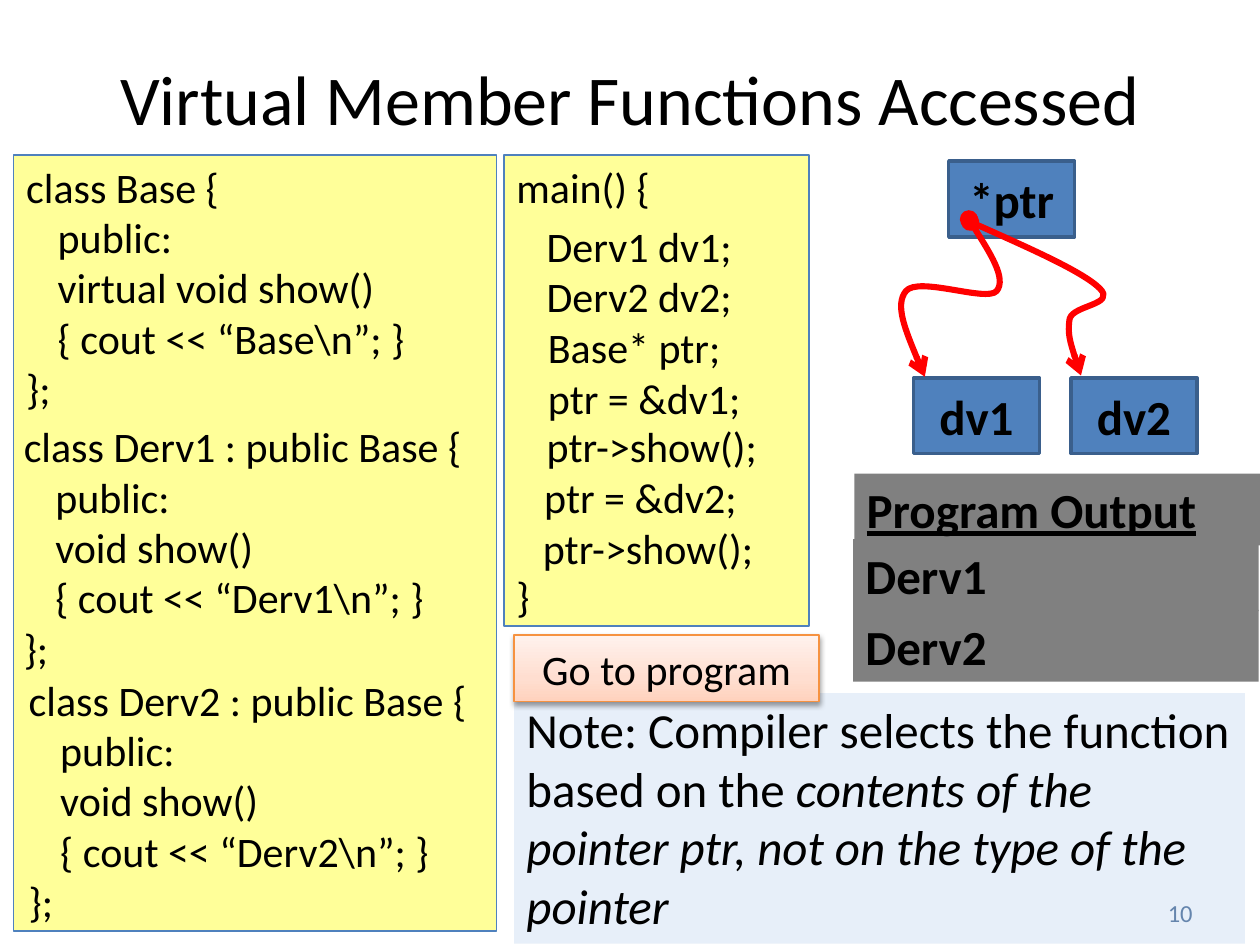
from dataclasses import dataclass
from typing import Optional

import pptx
import pptx.dml.color
import pptx.enum.shapes
import pptx.enum.text
import pptx.oxml
import pptx.oxml.ns
import pptx.util
from pptx.util import Inches

RGBColor = pptx.dml.color.RGBColor
Align = pptx.enum.text.PP_ALIGN
Anchor = pptx.enum.text.MSO_ANCHOR
qn = pptx.oxml.ns.qn

BLACK = RGBColor(0x00, 0x00, 0x00)
YELLOW = RGBColor(0xFF, 0xFF, 0x00)
BLUE = RGBColor(0x4F, 0x81, 0xBD)
DARK_BLUE = RGBColor(0x3A, 0x5F, 0x8C)
NAVY = RGBColor(0x1F, 0x49, 0x7D)
PALE_BLUE = RGBColor(0xC6, 0xD9, 0xF1)
GRAY = RGBColor(0x80, 0x80, 0x80)
RED = RGBColor(0xFF, 0x00, 0x00)
ORANGE = RGBColor(0xF6, 0x92, 0x40)
PEACH = RGBColor(0xFF, 0xDE, 0xD0)
BUTTON_STOPS = ((0, "FFD2BD"), (35, "FFDED0"), (100, "FFF2ED"))
CODE_INDENT = Inches(0.25)


@dataclass
class Box:
    left: float
    top: float
    width: float
    height: float
    lines: tuple[str, ...]
    indented: tuple[int, ...] = ()
    fill: Optional[RGBColor] = None
    opacity: int = 100
    line: Optional[RGBColor] = None
    line_width: float = 0.75
    size: int = 24
    color: RGBColor = BLACK
    bold: bool = False
    underline: bool = False
    centered: bool = False
    middle: bool = False


def draw_box(slide, box: Box):
    """Draw a filled rectangle, or a plain text box when there is no fill."""
    place = [Inches(v) for v in (box.left, box.top, box.width, box.height)]
    if box.fill is None:
        shape = slide.shapes.add_textbox(*place)
    else:
        shape = slide.shapes.add_shape(
            pptx.enum.shapes.MSO_SHAPE.RECTANGLE, *place)
        shape.shadow.inherit = False
        shape.fill.solid()
        shape.fill.fore_color.rgb = box.fill
        if box.opacity < 100:
            color = next(shape.fill._xPr.iter(qn("a:srgbClr")))
            color.append(pptx.oxml.parse_xml(
                f'<a:alpha {pptx.oxml.ns.nsdecls("a")} val="{box.opacity * 1000}"/>'))
        if box.line is None:
            shape.line.fill.background()
        else:
            shape.line.color.rgb = box.line
            shape.line.width = pptx.util.Pt(box.line_width)
    frame = shape.text_frame
    frame.word_wrap = True
    frame.vertical_anchor = Anchor.MIDDLE if box.middle else Anchor.TOP
    frame.text = "\n".join(box.lines)
    for index, paragraph in enumerate(frame.paragraphs):
        paragraph.alignment = Align.CENTER if box.centered else Align.LEFT
        if index in box.indented:
            properties = paragraph._p.get_or_add_pPr()
            properties.set("marL", str(CODE_INDENT))
            properties.set("indent", "0")
        for run in paragraph.runs:
            format_run(run, box)
    return shape


def format_run(run, box: Box) -> None:
    run.font.name = "Calibri"
    run.font.size = pptx.util.Pt(box.size)
    run.font.color.rgb = box.color
    run.font.bold = box.bold
    run.font.underline = box.underline


def draw_curved_arrow(slide, points: list[tuple[float, float]]) -> None:
    """Draw Bezier curves: a start point, then three points per curve."""
    start, *rest = [(Inches(x), Inches(y)) for x, y in points]
    builder = slide.shapes.build_freeform(*start)
    builder.add_line_segments(rest, close=False)
    shape = builder.convert_to_shape()
    shape.shadow.inherit = False
    shape.fill.background()
    shape.line.color.rgb = RED
    shape.line.width = pptx.util.Pt(3.5)

    # Join every three line segments into one cubic curve
    namespace = pptx.oxml.ns.nsdecls("a")
    segments = list(shape._element.iter(qn("a:lnTo")))
    path = segments[0].getparent()
    for first in range(0, len(segments), 3):
        curve = pptx.oxml.parse_xml(f"<a:cubicBezTo {namespace}/>")
        path.append(curve)
        for segment in segments[first:first + 3]:
            curve.append(segment[0])
            path.remove(segment)

    outline = shape._element.spPr.find(qn("a:ln"))
    for end, kind in (("headEnd", "oval"), ("tailEnd", "arrow")):
        outline.append(pptx.oxml.parse_xml(
            f'<a:{end} {namespace} type="{kind}"/>'))


def style_button(shape) -> None:
    """Give the button its three-stop gradient and soft shadow."""
    namespace = pptx.oxml.ns.nsdecls("a")
    properties = shape._element.spPr
    stops = "".join(
        f'<a:gs pos="{position * 1000}"><a:srgbClr val="{color}"/></a:gs>'
        for position, color in BUTTON_STOPS)
    gradient = pptx.oxml.parse_xml(
        f'<a:gradFill {namespace} rotWithShape="1"><a:gsLst>{stops}</a:gsLst>'
        '<a:lin ang="16200000" scaled="0"/></a:gradFill>')
    properties.replace(properties.find(qn("a:solidFill")), gradient)
    properties.find(qn("a:effectLst")).append(pptx.oxml.parse_xml(
        f'<a:outerShdw {namespace} blurRad="{pptx.util.Pt(3.1)}" '
        f'dist="{pptx.util.Pt(1.6)}" dir="5400000" rotWithShape="0">'
        '<a:srgbClr val="000000"><a:alpha val="38000"/></a:srgbClr></a:outerShdw>'))


def code_panel(left: float, width: float, height: float, *lines: str,
               indented: tuple[int, ...] = ()) -> Box:
    return Box(left, 1.23, width, height, lines, indented,
               fill=YELLOW, opacity=40, line=BLUE)


def derived_class(left: float, top: float, width: float, name: str) -> Box:
    lines = (f"class {name} : public Base {{", "public:", "void show()",
             f"{{ cout << “{name}\\n”; }}", "};")
    return Box(left, top, width, 2.12, lines, (1, 2, 3))


def statements(left: float, top: float, *lines: str) -> Box:
    return Box(left, top, 2.42, 0.1 + 0.4 * len(lines), lines,
               tuple(range(len(lines))))


def object_box(left: float, top: float, name: str) -> Box:
    return Box(left, top, 1, 0.6, (name,), fill=BLUE, line=DARK_BLUE,
               line_width=2, size=28, bold=True, centered=True, middle=True)


def output_row(left: float, top: float, text: str, underline: bool = False) -> Box:
    return Box(left, top, 3.22, 0.57, (text,), fill=GRAY, size=28,
               bold=True, underline=underline)


def main() -> None:
    presentation = pptx.Presentation()
    presentation.slide_width = Inches(10)
    presentation.slide_height = Inches(7.5)
    slide = presentation.slides.add_slide(presentation.slide_layouts[5])

    # Slide number, behind the note
    draw_box(slide, Box(9.17, 7.08, 0.67, 0.33, ("10",), size=14,
                        color=NAVY, middle=True))

    # Title
    title = slide.shapes.title
    title.left, title.top = Inches(0.5), Inches(0.38)
    title.width, title.height = Inches(9), Inches(0.78)
    title.text_frame.text = "Virtual Member Functions Accessed"
    title.text_frame.vertical_anchor = Anchor.MIDDLE
    title.text_frame.paragraphs[0].alignment = Align.CENTER
    format_run(title.text_frame.paragraphs[0].runs[0], Box(0, 0, 0, 0, (), size=40))

    # Code panels
    draw_box(slide, code_panel(
        0.11, 3.83, 6.16, "class Base {", "public:", "virtual void show()",
        "{ cout << “Base\\n”; }", "};", indented=(1, 2, 3)))
    main_panel = draw_box(slide, code_panel(4, 2.42, 3.74, "main() {", "}"))
    main_panel.text_frame.paragraphs[1].space_before = pptx.util.Pt(205)
    draw_box(slide, derived_class(0.09, 3.29, 3.78, "Derv1"))
    draw_box(slide, derived_class(0.13, 5.3, 3.83, "Derv2"))

    # Statements inside main
    for box in (statements(3.99, 1.7, "Derv1 dv1;", "Derv2 dv2;"),
                statements(4, 2.5, "Base* ptr;"),
                statements(4, 2.91, "ptr = &dv1;"),
                statements(3.99, 3.29, "ptr->show();"),
                statements(3.97, 3.69, "ptr = &dv2;"),
                statements(3.96, 4.1, "ptr->show();")):
        draw_box(slide, box)

    # Pointer diagram
    for box in (object_box(7.25, 3, "dv1"), object_box(8.5, 3, "dv2"),
                object_box(7.53, 1.28, "*ptr")):
        draw_box(slide, box)
    draw_curved_arrow(slide, [
        (7.69, 1.74), (7.84, 1.98), (7.99, 2.21), (7.91, 2.31), (7.83, 2.4),
        (7.29, 2.19), (7.19, 2.31), (7.1, 2.42), (7.22, 2.71), (7.34, 2.99)])
    draw_curved_arrow(slide, [
        (7.7, 1.76), (8.15, 1.96), (8.6, 2.16), (8.73, 2.29), (8.86, 2.42),
        (8.52, 2.42), (8.49, 2.53), (8.47, 2.65), (8.52, 2.81), (8.58, 2.98)])

    # Program output
    for box in (output_row(6.78, 3.76, "Program Output", underline=True),
                output_row(6.77, 4.28, "Derv1"), output_row(6.77, 4.84, "Derv2")):
        draw_box(slide, box)

    # Note with its italic ending
    note = Box(4.08, 5.5, 5.8, 1.99,
               ("Note: Compiler selects the function based on the ",),
               fill=PALE_BLUE, opacity=42, size=28)
    ending = draw_box(slide, note).text_frame.paragraphs[0].add_run()
    ending.text = "contents of the pointer ptr, not on the type of the pointer"
    format_run(ending, note)
    ending.font.italic = True

    # Button
    style_button(draw_box(slide, Box(
        4.08, 5.04, 2.42, 0.53, ("Go to program",), fill=PEACH, line=ORANGE,
        centered=True, middle=True)))

    presentation.save("out.pptx")


if __name__ == "__main__":
    main()
